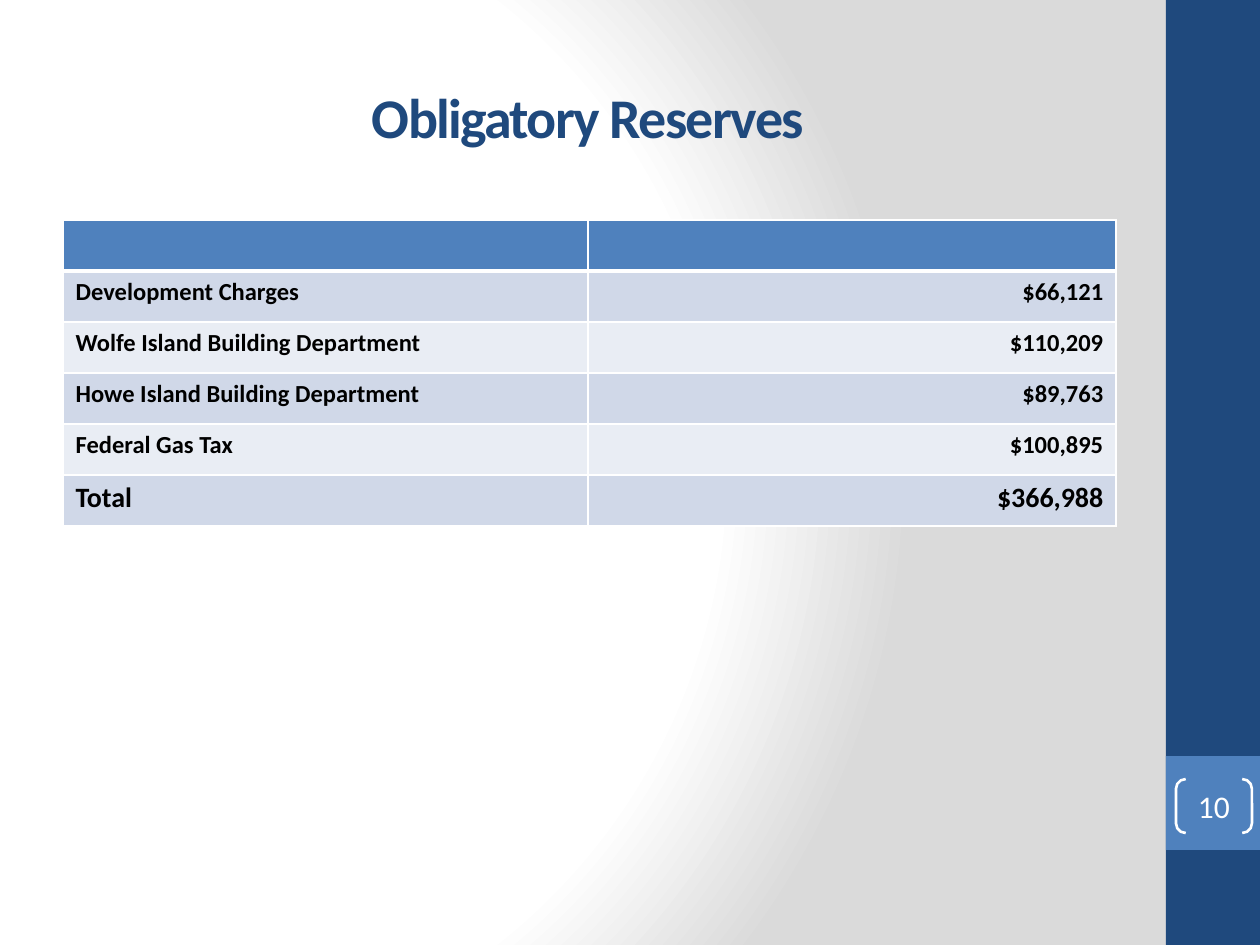
from dataclasses import dataclass

from pptx import Presentation
from pptx.dml.color import RGBColor
from pptx.enum.shapes import MSO_SHAPE as Shape
from pptx.enum.text import MSO_ANCHOR as Anchor, PP_ALIGN as Align
from pptx.oxml import parse_xml
from pptx.oxml.ns import nsdecls, qn
from pptx.util import Emu, Pt

PX_PER_INCH = 126


@dataclass(frozen=True)
class Theme:
    font: str = "Calibri"
    navy: str = "1F497D"
    blue: str = "4F81BD"
    band_dark: str = "D0D8E8"
    band_light: str = "E9EDF4"
    white: str = "FFFFFF"
    gray: str = "DADADA"
    black: str = "000000"
    title_size: int = 32
    number_size: int = 18
    total_size: int = 16
    body_size: int = 14
    rule: float = 1
    header_rule: float = 3
    bracket_line: float = 1.5


def px(length):
    return Emu(round(length * 914400 / PX_PER_INCH))


def rgb(color):
    return RGBColor.from_string(color)


class SlideBuilder:
    def __init__(self, page, theme):
        self.page = page
        self.theme = theme

    def background(self):
        """Fill the page with white that fades to gray away from the left."""
        stops = ((0, self.theme.white), (75, self.theme.white), (100, self.theme.gray))
        stop_xml = "".join(
            f'<a:gs pos="{place * 1000}"><a:srgbClr val="{color}"/></a:gs>'
            for place, color in stops)
        gradient = parse_xml(
            f'<a:gradFill {nsdecls("a")} rotWithShape="1"><a:gsLst>{stop_xml}</a:gsLst>'
            '<a:path path="circle"><a:fillToRect l="20000" t="50000" r="100000" b="50000"/>'
            '</a:path></a:gradFill>')
        self.page.background.fill.solid()
        properties = next(self.page.element.iter(qn("p:bgPr")))
        properties.replace(properties.find(qn("a:solidFill")), gradient)

    def span(self, para, text, size, color, bold=False):
        run = para.add_run()
        run.text = text
        run.font.name = self.theme.font
        run.font.size = Pt(size)
        run.font.bold = bold
        run.font.color.rgb = rgb(color)
        return run

    def block(self, left, top, width, height, color):
        shape = self.page.shapes.add_shape(
            Shape.RECTANGLE, px(left), px(top), px(width), px(height))
        shape.shadow.inherit = False
        shape.fill.solid()
        shape.fill.fore_color.rgb = rgb(color)
        shape.line.fill.background()

    def title(self, left, top, width, height, text):
        box = self.page.shapes.add_textbox(px(left), px(top), px(width), px(height))
        frame = box.text_frame
        frame.word_wrap = True
        frame.vertical_anchor = Anchor.MIDDLE
        para = frame.paragraphs[0]
        para.alignment = Align.CENTER
        run = self.span(para, text, self.theme.title_size, self.theme.navy, True)
        run.font._element.set("spc", "-100")

    def page_number(self, left, top, width, height, text):
        shape = self.page.shapes.add_shape(
            Shape.DOUBLE_BRACKET, px(left), px(top), px(width), px(height))
        shape.adjustments[0] = 0.18
        shape.shadow.inherit = False
        shape.fill.background()
        shape.line.color.rgb = rgb(self.theme.white)
        shape.line.width = Pt(self.theme.bracket_line)
        frame = shape.text_frame
        frame.margin_left = frame.margin_right = 0
        frame.margin_top = frame.margin_bottom = 0
        frame.vertical_anchor = Anchor.MIDDLE
        para = frame.paragraphs[0]
        para.alignment = Align.CENTER
        self.span(para, text, self.theme.number_size, self.theme.white)

    def cell_borders(self, cell, top, bottom):
        rule = self.theme.rule
        sides = (("lnL", rule), ("lnR", rule), ("lnT", top), ("lnB", bottom))
        properties = cell._tc.get_or_add_tcPr()
        for index, (side, width) in enumerate(sides):
            properties.insert(index, parse_xml(
                f'<a:{side} {nsdecls("a")} w="{Pt(width)}"><a:solidFill>'
                f'<a:srgbClr val="{self.theme.white}"/></a:solidFill></a:{side}>'))

    def table(self, left, top, widths, row_height, rows):
        """Add a table with a header row first and a larger total row last."""
        theme = self.theme
        grid = self.page.shapes.add_table(
            len(rows), len(widths), px(left), px(top),
            px(sum(widths)), px(row_height * len(rows))).table
        for column, width in zip(grid.columns, widths):
            column.width = px(width)
        for r, values in enumerate(rows):
            grid.rows[r].height = px(row_height)
            band = theme.band_dark if r % 2 else theme.band_light
            size = theme.total_size if r == len(rows) - 1 else theme.body_size
            for c, value in enumerate(values):
                cell = grid.cell(r, c)
                cell.fill.solid()
                cell.fill.fore_color.rgb = rgb(band if r else theme.blue)
                self.cell_borders(
                    cell,
                    top=theme.header_rule if r == 1 else theme.rule,
                    bottom=theme.header_rule if r == 0 else theme.rule)
                para = cell.text_frame.paragraphs[0]
                para.alignment = Align.RIGHT if c else Align.LEFT
                if value:
                    self.span(para, value, size, theme.black, True)


def main():
    deck = Presentation()
    deck.slide_width, deck.slide_height = px(1260), px(945)
    theme = Theme()
    builder = SlideBuilder(deck.slides.add_slide(deck.slide_layouts[6]), theme)
    reserves = (
        ("", ""),
        ("Development Charges", "$66,121"),
        ("Wolfe Island Building Department", "$110,209"),
        ("Howe Island Building Department", "$89,763"),
        ("Federal Gas Tax", "$100,895"),
        ("Total", "$366,988"),
    )
    builder.background()
    builder.block(1166, 0, 94, 945, theme.navy)
    builder.block(1166, 756, 94, 94, theme.blue)
    builder.title(63, 38, 1050, 157, "Obligatory Reserves")
    builder.table(63, 220, (525, 528), 51, reserves)
    builder.page_number(1176, 779, 76, 54, "10")
    deck.save("out.pptx")


if __name__ == "__main__":
    main()
